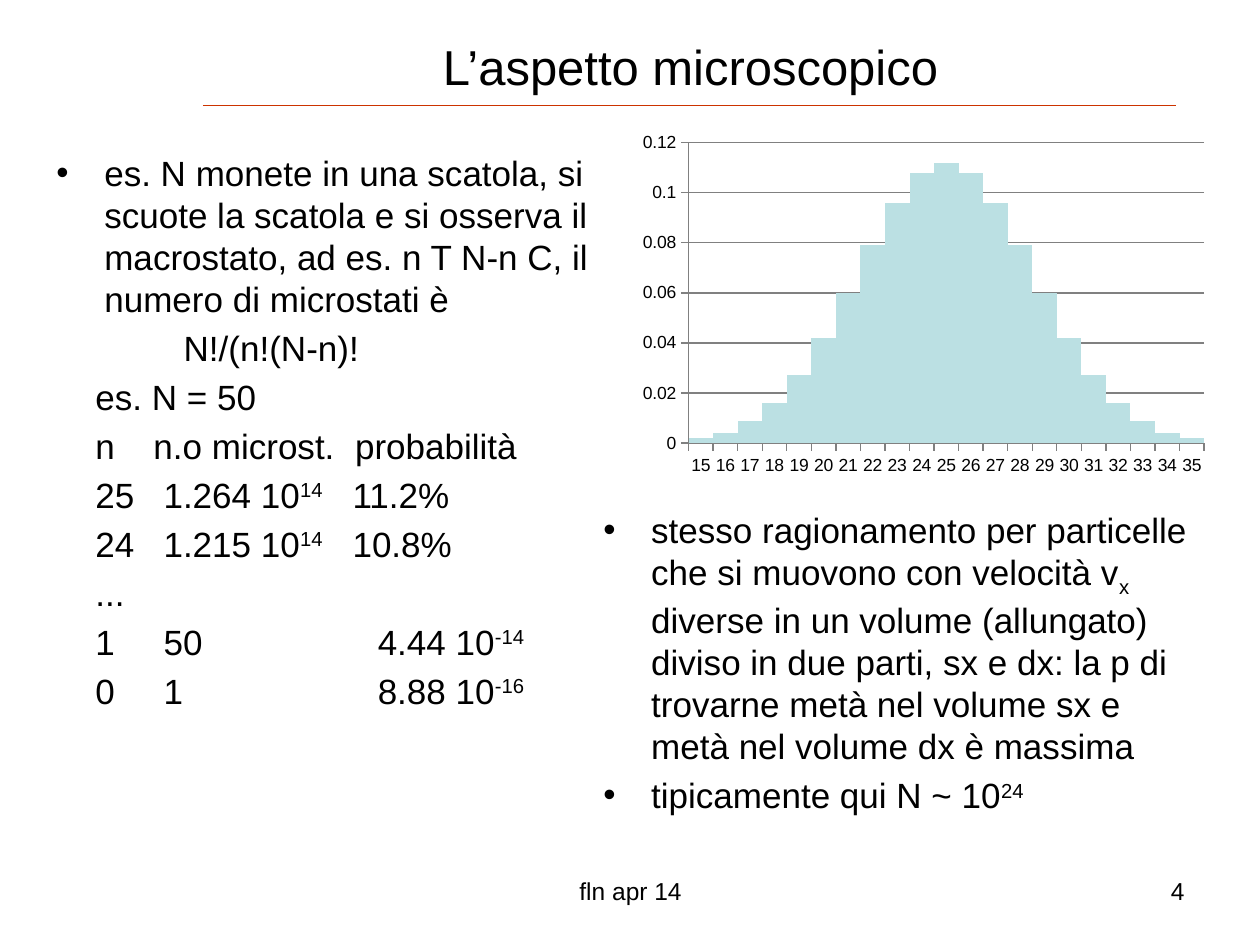
from lxml import etree
from pptx import Presentation
from pptx import util as u
from pptx.chart import data as chart_data
from pptx.dml import color
from pptx.enum import chart as chart_enum, shapes, text
from pptx.oxml import ns

COLORS = {"text": "000000", "rule": "CC3300", "bars": "BBE0E3", "grid": "808080"}
FONT = "Arial"
ALIGN = text.PP_ALIGN
SUPER, SUB = 30000, -25000


def rgb(name):
    return color.RGBColor.from_string(COLORS[name])


def set_font(font, size):
    font.name = FONT
    font.size = u.Pt(size)
    font.color.rgb = rgb("text")


def add_box(page, left, top, width, height, anchor=text.MSO_ANCHOR.TOP):
    box = page.shapes.add_textbox(*map(u.Inches, (left, top, width, height)))
    box.text_frame.word_wrap = True
    box.text_frame.vertical_anchor = anchor
    return box.text_frame


def add_spans(para, parts):
    for part in parts:
        words, baseline = part if isinstance(part, tuple) else (part, 0)
        span = para.add_run()
        span.text = words
        if baseline:
            span.font._element.set("baseline", str(baseline))


def add_body(page, left, top, width, height, paragraphs):
    frame = add_box(page, left, top, width, height)
    for index, (bulleted, tabs, parts) in enumerate(paragraphs):
        para = frame.add_paragraph() if index else frame.paragraphs[0]
        props = para._p.get_or_add_pPr()
        if bulleted:
            props.set("marL", str(u.Inches(0.38)))
            props.set("indent", str(-u.Inches(0.38)))
            etree.SubElement(props, ns.qn("a:buFont"), typeface=FONT)
            etree.SubElement(props, ns.qn("a:buChar"), char="•")
        if tabs:
            stops = etree.SubElement(props, ns.qn("a:tabLst"))
            for stop in tabs:
                etree.SubElement(stops, ns.qn("a:tab"), pos=str(u.Inches(stop)), algn="l")
        if index:
            para.space_before = u.Pt(4)
        set_font(para.font, 20)
        add_spans(para, parts)


def add_label(page, left, top, width, height, words, size, align,
              anchor=text.MSO_ANCHOR.TOP):
    para = add_box(page, left, top, width, height, anchor).paragraphs[0]
    para.alignment = align
    set_font(para.font, size)
    add_spans(para, [words])


def add_header(page, left, top, width, height):
    bottom = top + height
    rule = page.shapes.add_connector(
        shapes.MSO_CONNECTOR.STRAIGHT,
        *map(u.Inches, (left + 0.08, bottom, left + width - 0.1, bottom)))
    rule.line.color.rgb = rgb("rule")
    rule.line.width = u.Pt(0.75)
    etree.SubElement(rule._element.spPr, ns.qn("a:effectLst"))
    add_label(page, left, top, width, height, "L’aspetto microscopico", 28,
              ALIGN.CENTER, text.MSO_ANCHOR.MIDDLE)


def add_coins(page, left, top, width, height):
    row = (0.31, 0.85, 2.35)
    tiny = (0.31, 0.85, 2.55)
    add_body(page, left, top, width, height, [
        (True, (), ["es. N monete in una scatola, si scuote la scatola e si osserva "
                    "il macrostato, ad es. n T N-n C, il numero di microstati è"]),
        (False, (1.01,), ["\tN!/(n!(N-n)!"]),
        (False, row, ["\tes. N = 50"]),
        (False, (0.31, 0.77, 2.37), ["\tn\tn.o microst.\tprobabilità"]),
        (False, row, ["\t25\t1.264 10", ("14", SUPER), "\t11.2%"]),
        (False, row, ["\t24\t1.215 10", ("14", SUPER), "\t10.8%"]),
        (False, row, ["\t..."]),
        (False, tiny, ["\t1\t50\t4.44 10", ("-14", SUPER)]),
        (False, tiny, ["\t0\t1\t8.88 10", ("-16", SUPER)]),
    ])


def add_particles(page, left, top, width, height):
    add_body(page, left, top, width, height, [
        (True, (), ["stesso ragionamento per particelle che si muovono con velocità v",
                    ("x", SUB),
                    " diverse in un volume (allungato) diviso in due parti, sx e dx: "
                    "la p di trovarne metà nel volume sx e metà nel volume dx è massima"]),
        (True, (), ["tipicamente qui N ~ 10", ("24", SUPER)]),
    ])


def add_histogram(page, left, top, width, height):
    rising = [0.002, 0.004, 0.009, 0.016, 0.027, 0.042, 0.06, 0.079, 0.096, 0.108]
    data = chart_data.CategoryChartData()
    data.categories = [str(heads) for heads in range(15, 36)]
    data.add_series("Series 1", rising + [0.112] + rising[::-1])
    chart = page.shapes.add_chart(
        chart_enum.XL_CHART_TYPE.COLUMN_CLUSTERED,
        *map(u.Inches, (left, top, width, height)), data).chart
    chart.has_legend = False
    chart.has_title = False
    set_font(chart.font, 10)

    plot = chart.plots[0]
    plot.gap_width = 0
    plot.vary_by_categories = False
    fill = plot.series[0].format.fill
    fill.solid()
    fill.fore_color.rgb = rgb("bars")

    values = chart.value_axis
    values.minimum_scale, values.maximum_scale, values.major_unit = 0, 0.12, 0.02
    values.has_major_gridlines = True
    values.tick_labels.number_format = "General"
    values.tick_labels.number_format_is_linked = False
    for axis in (values, chart.category_axis):
        axis.major_tick_mark = chart_enum.XL_TICK_MARK.OUTSIDE
        axis.format.line.color.rgb = rgb("grid")
    values.major_gridlines.format.line.color.rgb = rgb("grid")

    area = chart._chartSpace.chart.plotArea
    for old in area.findall(ns.qn("c:layout")):
        area.remove(old)
    layout = etree.Element(ns.qn("c:layout"))
    area.insert(0, layout)
    manual = etree.SubElement(layout, ns.qn("c:manualLayout"))
    for tag, value in (("layoutTarget", "inner"), ("xMode", "edge"), ("yMode", "edge"),
                       ("x", "0.1"), ("y", "0.05"), ("w", "0.88"), ("h", "0.84")):
        etree.SubElement(manual, ns.qn("c:" + tag), val=value)


def add_footer(page, top, height):
    add_label(page, 3.42, top, 3.17, height, "fln apr 14", 14, ALIGN.CENTER)
    add_label(page, 7.17, top, 2.33, height, "4", 14, ALIGN.RIGHT)


def main():
    deck = Presentation()
    deck.slide_width, deck.slide_height = u.Inches(10), u.Inches(7.5)
    page = deck.slides.add_slide(deck.slide_layouts[6])
    add_header(page, 1.53, 0.21, 7.9, 0.63)
    add_coins(page, 0.35, 1.15, 4.56, 5.67)
    add_particles(page, 4.69, 3.99, 4.96, 2.99)
    add_footer(page, 6.9, 0.45)
    add_histogram(page, 5, 0.99, 4.65, 2.84)
    deck.save("out.pptx")


if __name__ == "__main__":
    main()
